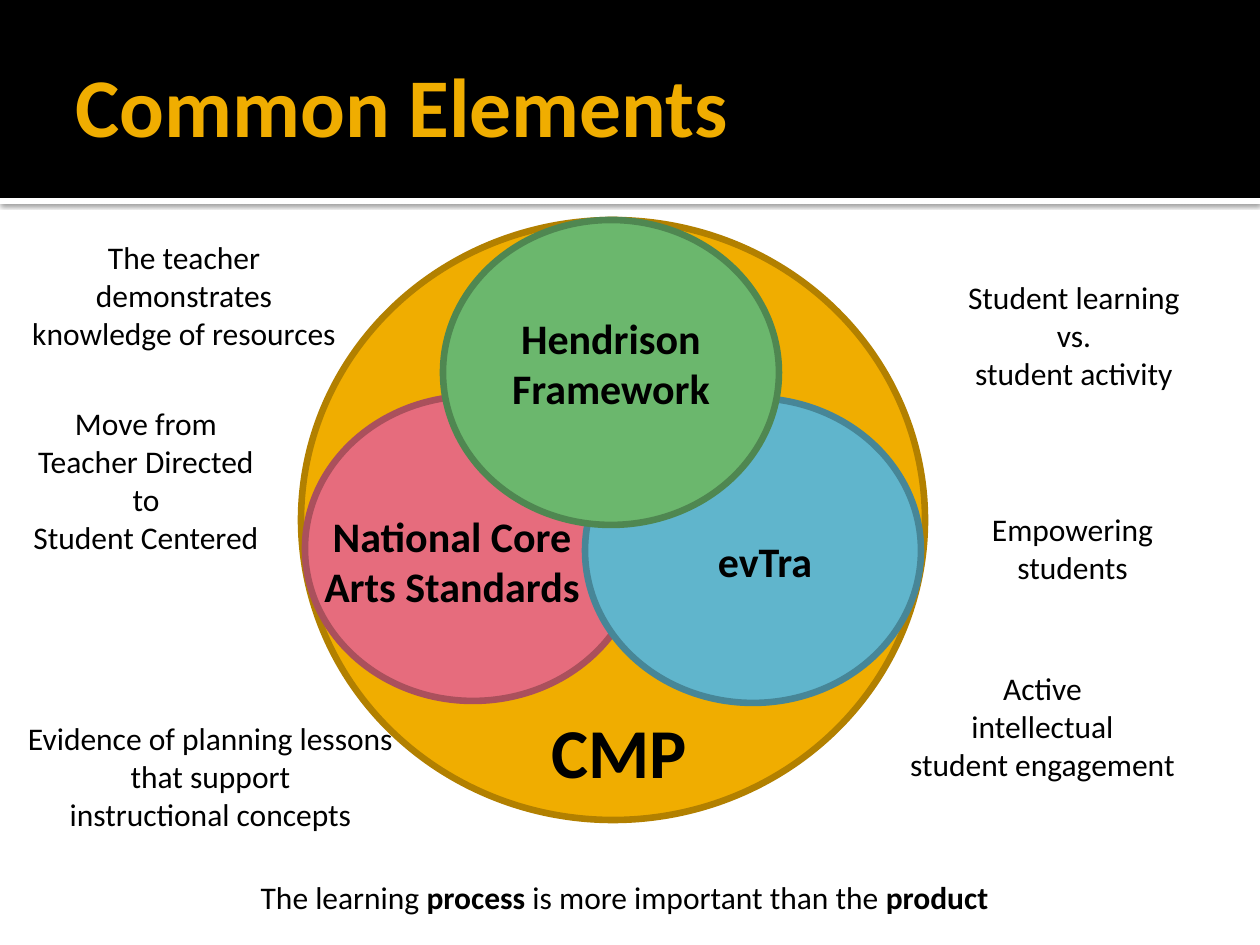
from lxml.etree import SubElement
from pptx import Presentation
from pptx.dml.color import RGBColor
from pptx.enum.shapes import MSO_SHAPE
from pptx.enum.text import MSO_ANCHOR, PP_ALIGN
from pptx.oxml.ns import qn
from pptx.util import Pt

PX = 914400 // 126
COLORS = {
    "black": "000000", "white": "FFFFFF",
    "gold": "F0AD00", "gold_edge": "B28000",
    "rose": "E66C7D", "rose_edge": "AA505C",
    "blue": "60B5CC", "blue_edge": "478697",
    "green": "6BB76D", "green_edge": "4F8751",
}
DIVIDER = (0, 198, 1260, 6)
HEADER = (0, 0, 1260, 198)
CIRCLE = (336, 305)
OUTER = ("gold", (301, 220, 624, 600))
INNER = [("rose", (305, 396)), ("blue", (585, 398)), ("green", (443, 220))]

TITLE = {"size": 47.7, "bold": True, "color": "gold"}
LABEL = {"size": 24, "bold": True, "color": "black"}
CENTER = {"size": 40, "bold": True, "color": "black"}
NOTE = {"size": 18, "bold": False, "color": "black"}

TEXTS = [
    ((689, 529, 152, 63), LABEL, True, ["evTra"]),
    ((494, 306, 234, 115), LABEL, False, ["Hendrison", "Framework"]),
    ((289, 504, 326, 115), LABEL, True, ["National Core Arts Standards"]),
    ((21, 398, 250, 165), NOTE, False,
     ["Move from", "Teacher Directed", "to", "Student Centered"]),
    ((535, 702, 168, 97), CENTER, False, ["CMP"]),
    ((235, 872, 779, 50), NOTE, False,
     ["The learning *process* is more important than the *product*"]),
    ((976, 504, 193, 89), NOTE, False, ["Empowering", "students"]),
    ((892, 663, 301, 127), NOTE, False,
     ["Active", "intellectual", "student engagement"]),
    ((935, 272, 278, 127), NOTE, True,
     ["Student learning vs.", "student activity"]),
    ((10, 232, 348, 127), NOTE, True,
     ["The teacher demonstrates", "knowledge of resources"]),
    ((10, 713, 401, 127), NOTE, False,
     ["Evidence of planning lessons", "that support", "instructional concepts"]),
]


def rgb(name):
    return RGBColor.from_string(COLORS[name])


def emu(box):
    return [v * PX for v in box]


def add_shape(s, kind, box, fill, edge=None):
    sp = s.shapes.add_shape(kind, *emu(box))
    sp.shadow.inherit = False
    sp.fill.solid()
    sp.fill.fore_color.rgb = rgb(fill)
    if edge:
        sp.line.color.rgb = rgb(edge)
        sp.line.width = Pt(3.78)
    else:
        sp.line.fill.background()
    return sp


def add_drop_shadow(sp):
    effects = sp._element.spPr.find(qn("a:effectLst"))
    shadow = SubElement(effects, qn("a:outerShdw"), blurRad=str(Pt(2.5)),
                        dist=str(Pt(0.8)), dir="5400000", algn="tl", rotWithShape="0")
    color = SubElement(shadow, qn("a:srgbClr"), val=COLORS["black"])
    SubElement(color, qn("a:alpha"), val="60000")


def add_text(s, box, style, wrap, lines, align=PP_ALIGN.CENTER):
    tf = s.shapes.add_textbox(*emu(box)).text_frame
    tf.word_wrap = wrap
    tf.vertical_anchor = MSO_ANCHOR.TOP
    for i, line in enumerate(lines):
        p = tf.paragraphs[0] if i == 0 else tf.add_paragraph()
        p.alignment = align
        for j, part in enumerate(line.split("*")):
            if not part:
                continue
            r = p.add_run()
            r.text = part
            font = {"name": "Calibri", "size": Pt(style["size"]),
                    "bold": style["bold"] or j % 2 == 1}
            for key, value in font.items():
                setattr(r.font, key, value)
            r.font.color.rgb = rgb(style["color"])


def main():
    prs = Presentation()
    prs.slide_width, prs.slide_height = emu((1260, 945))
    s = prs.slides.add_slide(prs.slide_layouts[6])
    add_drop_shadow(add_shape(s, MSO_SHAPE.RECTANGLE, DIVIDER, "white"))
    add_shape(s, MSO_SHAPE.RECTANGLE, HEADER, "black")
    circles = [OUTER] + [(color, at + CIRCLE) for color, at in INNER]
    add_text(s, (63, 48, 1134, 150), TITLE, True, ["Common Elements"], PP_ALIGN.LEFT)
    for color, box in circles:
        add_shape(s, MSO_SHAPE.OVAL, box, color, color + "_edge")
    for box, style, wrap, lines in TEXTS:
        add_text(s, box, style, wrap, lines)
    prs.save("out.pptx")


if __name__ == "__main__":
    main()
